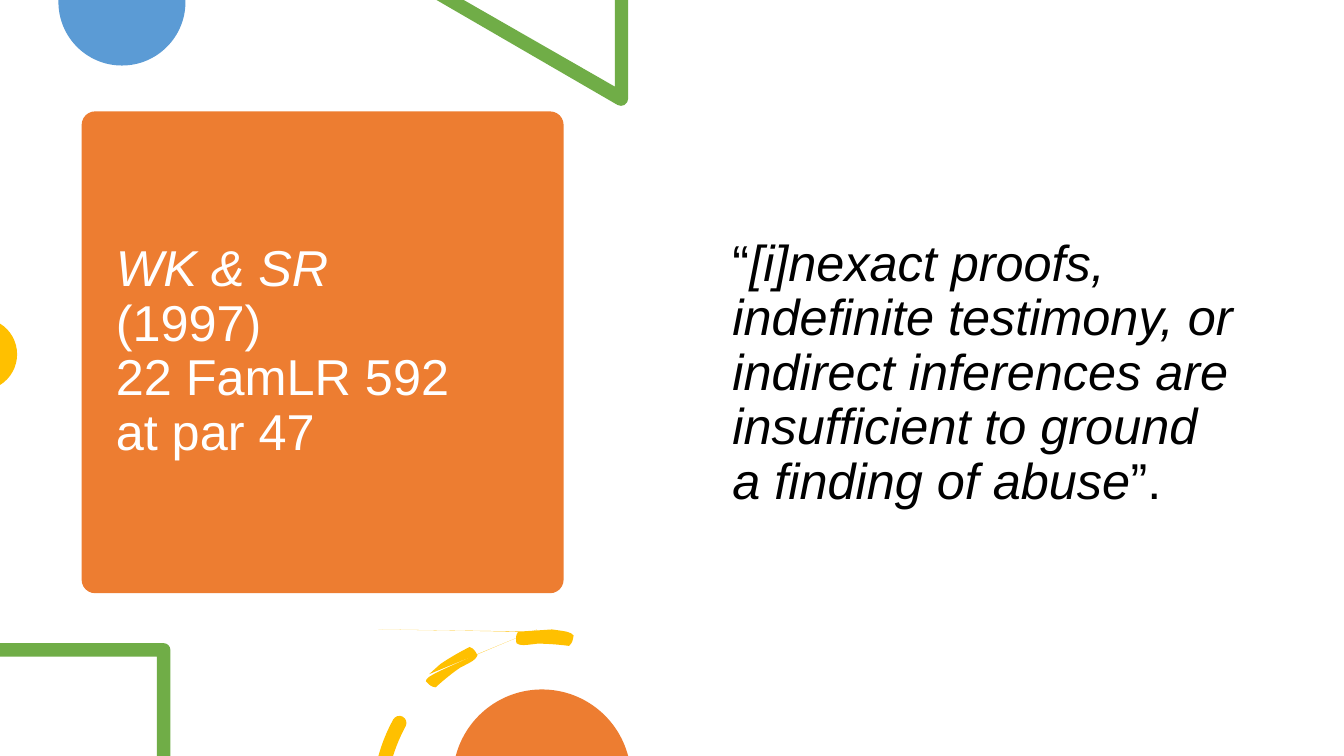
import math
import pptx
import pptx.util
import pptx.dml.color
import pptx.enum.shapes
import pptx.enum.text
import pptx.oxml.ns
import pptx.oxml.xmlchemy

RGB = pptx.dml.color.RGBColor
ORANGE = RGB(0xED, 0x7D, 0x31)
BLUE = RGB(0x5B, 0x9B, 0xD5)
GREEN = RGB(0x70, 0xAD, 0x47)
GOLD = RGB(0xFF, 0xC0, 0x00)
WHITE = RGB(0xFF, 0xFF, 0xFF)
BLACK = RGB(0, 0, 0)

COLS, ROWS = 133.3, 75
CELL = pptx.util.Inches(7.5) / ROWS
FINE = 100
HARD = chr(160)


def size(n):
    return pptx.util.Emu(round(n * CELL))


def paint(shape, color):
    shape.shadow.inherit = False
    shape.fill.solid()
    shape.fill.fore_color.rgb = color
    shape.line.fill.background()


def spot(x, y, r, turn, pull=0):
    c, s = math.cos(turn), math.sin(turn)
    return x + r * (c - pull * s), y + r * (s + pull * c)


def arc(x, y, r, start, end, parts=1):
    step = math.radians(end - start) / parts
    pull = 4 / 3 * math.tan(step / 4)
    turn = math.radians(start)
    points = [spot(x, y, r, turn)]
    for _ in range(parts):
        points.append(spot(x, y, r, turn, pull) + ("bend",))
        turn += step
        points += [spot(x, y, r, turn, -pull), spot(x, y, r, turn)]
    return points


def curve(shape, marks):
    name = pptx.oxml.ns.qn
    lines = list(shape._element.iter(name("a:lnTo")))
    for i, mark in enumerate(marks):
        if mark:
            bend = pptx.oxml.xmlchemy.OxmlElement("a:cubicBezTo")
            lines[i].addprevious(bend)
            for line in lines[i:i + 3]:
                bend.append(line[0])
                line.getparent().remove(line)


def draw(slide, box, color, *loops):
    left, top = box[:2]
    marks = [len(point) > 2 for loop in loops for point in loop[1:]]
    loops = [[((left + p[0]) * FINE, (top + p[1]) * FINE) for p in loop] for loop in loops]
    pen = slide.shapes.build_freeform(*loops[0][0], scale=CELL / FINE)
    for i, loop in enumerate(loops):
        if i:
            pen.move_to(*loop[0])
        pen.add_line_segments(loop[1:], close=False)
        pen.add_line_segments([], close=True)
    shape = pen.convert_to_shape()
    tail = []
    at = 0
    for loop in loops:
        count = len(loop) - 1
        tail += marks[at:at + count] + [False]
        at += count
    curve(shape, tail)
    paint(shape, color)


def write(slide, box, parts, color, anchor, inset):
    area = slide.shapes.add_textbox(*map(size, box))
    frame = area.text_frame
    frame.word_wrap = True
    frame.vertical_anchor = anchor
    frame.margin_left, frame.margin_top = map(size, inset)
    par = frame.paragraphs[0]
    par.line_spacing = 0.9
    for text, slant in parts:
        run = par.add_run()
        run.text = text.strip("\n").replace("~", HARD)
        run.font.name = "Arial"
        run.font.size = pptx.util.Pt(36)
        run.font.italic = slant
        run.font.color.rgb = color
        if text.endswith("\n"):
            par.add_line_break()


def card(slide, box):
    left, top, wide, high = box
    kind = pptx.enum.shapes.MSO_SHAPE.ROUNDED_RECTANGLE
    tile = slide.shapes.add_shape(kind, *map(size, box))
    tile.adjustments[0] = 0.028
    paint(tile, ORANGE)
    parts = [("WK & SR~\n", True), ("(1997) 22~FamLR~592 at~par 47", False)]
    inner = (left + 2.4, top + 1.1, wide - 4.7, high - 2.2)
    write(slide, inner, parts, WHITE, pptx.enum.text.MSO_ANCHOR.MIDDLE, (1, 0.5))


def quote(slide, box):
    parts = [
        ("“", False),
        ("[i]nexact~proofs, indefinite~testimony, or indirect inferences~are "
         "insufficient to ground a~finding of abuse", True),
        ("”.", False),
    ]
    write(slide, box, parts, BLACK, pptx.enum.text.MSO_ANCHOR.TOP, (5.95, 14.6))


def disc(slide, box):
    wide, high = box[2:]
    r = wide / 2
    draw(slide, box, BLUE, [(wide, 0)] + arc(r, high - r, r, 0, 180, 2) + [(0, 0)])


def wedge(slide, box):
    wide, high = box[2:]
    tip = arc(wide - 0.7, high - 0.7, 0.7, 0, 120, 2)
    hole = [(0, 0), (2.7, 0), (wide - 1.3, 8.6), (wide - 1.3, 0), (wide, 0)]
    draw(slide, box, GREEN, hole + tip)


def edge(slide, box):
    wide, high = box[2:]
    r = ((high / 2) ** 2 + wide ** 2) / (2 * wide)
    turn = math.degrees(math.asin(high / 2 / r))
    draw(slide, box, GOLD, arc(wide - r, high / 2, r, -turn, turn, 2))


def frame(slide, box):
    wide, high = box[2:]
    band = 1.35
    bend = arc(wide - 0.7, 0.7, 0.7, -90, 0)
    rest = [(wide, high), (wide - band, high), (wide - band, band), (0, band), (0, 0)]
    draw(slide, box, GREEN, bend + rest)


def dashes(slide, box):
    high = box[3]
    x, r, half = 16.6, 16.4, 0.7
    y = r + half

    def cap(turn, start):
        middle = spot(x, y, r, math.radians(turn))
        return arc(*middle, half, start, start + 180, 2)[1:]

    def low(ring):
        return 180 + math.degrees(math.asin((y - high) / ring))

    loops = []
    for start, end in ((None, 208.7), (228, 243), (262.5, 277.5)):
        out = start or low(r + half)
        back = start or low(r - half)
        loop = arc(x, y, r + half, out, end) + cap(end, end)
        loop += arc(x, y, r - half, end, back)[1:]
        if start:
            loop += cap(start, start + 180)
        loops.append(loop)
    draw(slide, box, GOLD, *loops)


def dome(slide, box):
    wide, high = box[2:]
    r = ((wide / 2) ** 2 + high ** 2) / (2 * high)
    turn = math.degrees(math.asin((r - high) / r))
    draw(slide, box, ORANGE, arc(wide / 2, r, r, 180 + turn, 360 - turn, 2))


def main():
    deck = pptx.Presentation()
    deck.slide_width, deck.slide_height = size(COLS), size(ROWS)
    slide = deck.slides.add_slide(deck.slide_layouts[6])
    card(slide, (8.1, 11.05, 47.8, 47.8))
    disc(slide, (5.8, 0, 12.6, 6.5))
    wedge(slide, (43.3, 0, 19, 10.5))
    edge(slide, (0, 32.1, 1.7, 6.1))
    quote(slide, (66.7, 9, 57.5, 53.5))
    frame(slide, (0, 63.8, 16.9, 11.2))
    dashes(slide, (37.4, 62.5, 19.4, 12.5))
    dome(slide, (45.2, 68.4, 17.1, 6.6))
    deck.save("out.pptx")


if __name__ == "__main__":
    main()
